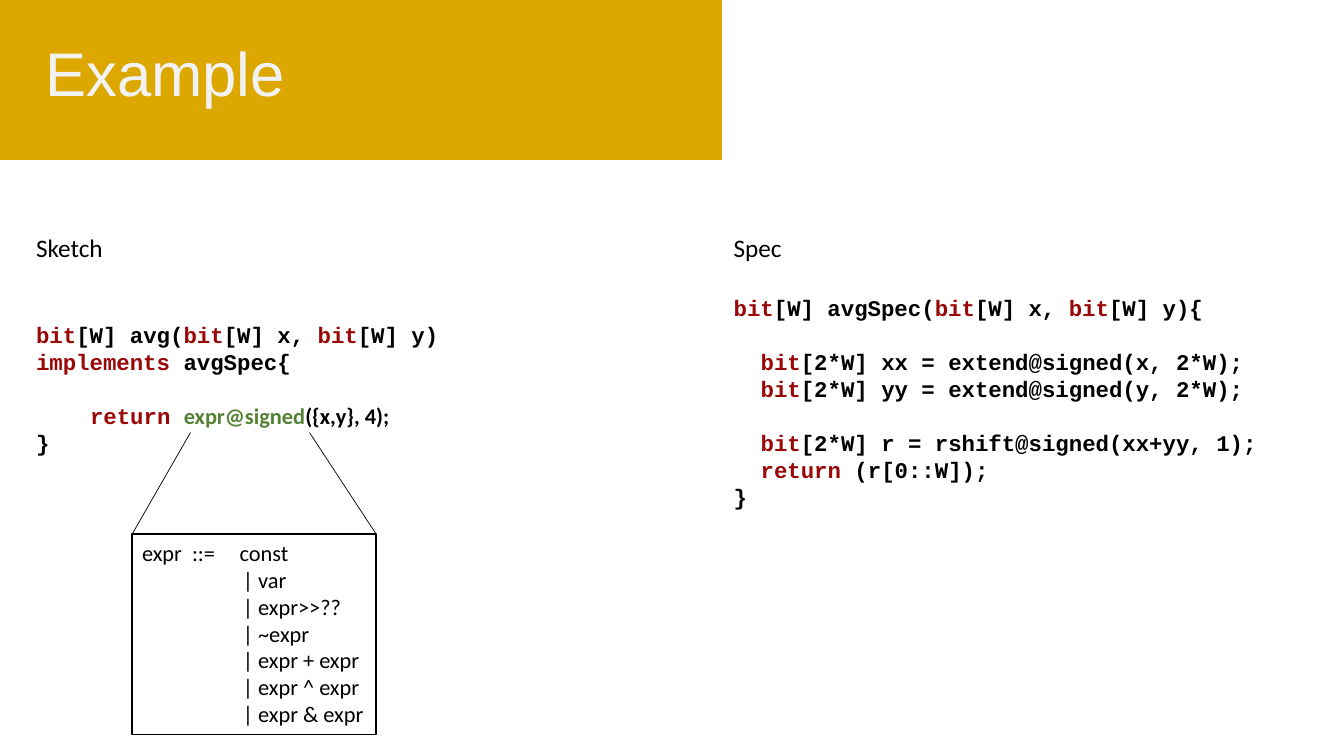
from lxml.etree import SubElement
from pptx import Presentation
from pptx.dml.color import RGBColor
from pptx.enum.shapes import MSO_CONNECTOR as Connector, MSO_SHAPE as Shape
from pptx.enum.text import MSO_ANCHOR as Anchor, PP_ALIGN as Align
from pptx.oxml.ns import qn
from pptx.util import Cm, Pt

COLORS = {"gold": "DCA800", "white": "FFFFFF", "title": "F2F2F2",
          "black": "000000", "keyword": "9A0707", "hole": "548235"}

# style: font, size, bold, colour
STYLES = {
    "title": ("Arial", 44, False, "title"),
    "heading": ("Calibri", 18, False, "black"),
    "grammar": ("Calibri", 16, False, "black"),
    "code": ("Courier New", 16, True, "black"),
    "keyword": ("Courier New", 16, True, "keyword"),
    "hole": ("Calibri", 16, True, "hole"),
    "args": ("Calibri", 16, True, "black"),
}
CODE_LINE = 19.3    # points
HEADING_LINE = 22   # points
CODE_CHAR = 0.34    # cm

BIT = ("keyword", "bit")
RETURN = ("keyword", "return ")

# code line: indent in characters, points of space before, runs
SPEC_CODE = [
    (0, HEADING_LINE, [BIT, ("code", "[W] avgSpec("), BIT, ("code", "[W] x, "),
                       BIT, ("code", "[W] y){")]),
    (2, CODE_LINE, [BIT, ("code", "[2*W] xx = extend@signed(x, 2*W);")]),
    (2, 0, [BIT, ("code", "[2*W] yy = extend@signed(y, 2*W);")]),
    (2, CODE_LINE, [BIT, ("code", "[2*W] r = rshift@signed(xx+yy, 1);")]),
    (2, 0, [RETURN, ("code", "(r[0::W]);")]),
    (0, 0, [("code", "}")]),
]
SKETCH_CODE = [
    (0, HEADING_LINE + CODE_LINE, [BIT, ("code", "[W] avg("), BIT,
                                   ("code", "[W] x, "), BIT, ("code", "[W] y)")]),
    (0, 0, [("keyword", "implements "), ("code", "avgSpec{")]),
    (4, CODE_LINE, [RETURN, ("hole", "expr@signed"), ("args", "({x,y}, 4);")]),
    (0, 0, [("code", "}")]),
]
ALTERNATIVES = ["var", "expr>>??", "~expr", "expr + expr", "expr ^ expr", "expr & expr"]


class SlideBuilder:
    def __init__(self, slide):
        self.shapes = slide.shapes

    @staticmethod
    def color(name):
        return RGBColor.from_string(COLORS[name])

    def box(self, kind, left, top, width, height, fill, line, line_width):
        box = self.shapes.add_shape(kind, Cm(left), Cm(top), Cm(width), Cm(height))
        box.shadow.inherit = False
        box.fill.solid()
        box.fill.fore_color.rgb = self.color(fill)
        box.line.color.rgb = self.color(line)
        box.line.width = Pt(line_width)
        return box.text_frame

    def text(self, left, top, width, height, anchor=Anchor.TOP):
        frame = self.shapes.add_textbox(Cm(left), Cm(top), Cm(width), Cm(height)).text_frame
        frame.word_wrap = True
        frame.vertical_anchor = anchor
        return frame

    def paragraph(self, frame, runs, margin=0, hanging=0, before=0, spacing=None):
        """Fill the empty first paragraph, or append one; margins in cm."""
        first = frame.paragraphs[0]
        paragraph = frame.add_paragraph() if first.runs else first
        paragraph.alignment = Align.LEFT
        paragraph.space_before = Pt(before)
        if spacing:
            paragraph.line_spacing = spacing
        properties = paragraph._p.get_or_add_pPr()
        properties.set("marL", str(Cm(margin)))
        properties.set("indent", str(-Cm(hanging)))
        for style, words in runs:
            run = paragraph.add_run()
            run.text = words
            font = run.font
            font.name, size, font.bold, color = STYLES[style]
            font.size = Pt(size)
            font.color.rgb = self.color(color)

    def listing(self, left, height, heading, code):
        frame = self.text(left, 5.74, 13.9, height)
        self.paragraph(frame, [("heading", heading)])
        for indent, before, runs in code:
            self.paragraph(frame, runs, margin=indent * CODE_CHAR, before=before,
                           spacing=Pt(CODE_LINE))

    def line(self, x1, y1, x2, y2):
        line = self.shapes.add_connector(Connector.STRAIGHT, Cm(x1), Cm(y1), Cm(x2), Cm(y2))
        line.line.color.rgb = self.color("black")
        line.line.width = Pt(0.5)
        SubElement(line._element.spPr, qn("a:effectLst"))


def main():
    deck = Presentation()
    deck.slide_width, deck.slide_height = Cm(33.87), Cm(19.05)
    builder = SlideBuilder(deck.slides.add_slide(deck.slide_layouts[6]))

    builder.box(Shape.FLOWCHART_PROCESS, -0.03, -0.05, 18.26, 4.11, "gold", "white", 1.5)
    title = builder.text(0.89, 0.08, 17.35, 3.68, Anchor.MIDDLE)
    builder.paragraph(title, [("title", "Example")], spacing=0.9)

    builder.listing(18.24, 7.26, "Spec", SPEC_CODE)
    builder.listing(0.66, 5.89, "Sketch", SKETCH_CODE)

    left, top, width = 3.33, 13.46, 6.15
    grammar = builder.box(Shape.RECTANGLE, left, top, width, 5.05, "white", "black", 1)
    grammar.word_wrap = False
    grammar.vertical_anchor = Anchor.TOP
    builder.paragraph(grammar, [("grammar", "expr  ::=\tconst")], margin=2.46, hanging=2.46)
    for alternative in ALTERNATIVES:
        builder.paragraph(grammar, [("grammar", f"| {alternative}")], margin=2.54)

    for hole_edge, box_edge in ((4.8, left), (7.8, left + width)):
        builder.line(hole_edge, 10.9, box_edge, top)

    deck.save("out.pptx")


if __name__ == "__main__":
    main()
